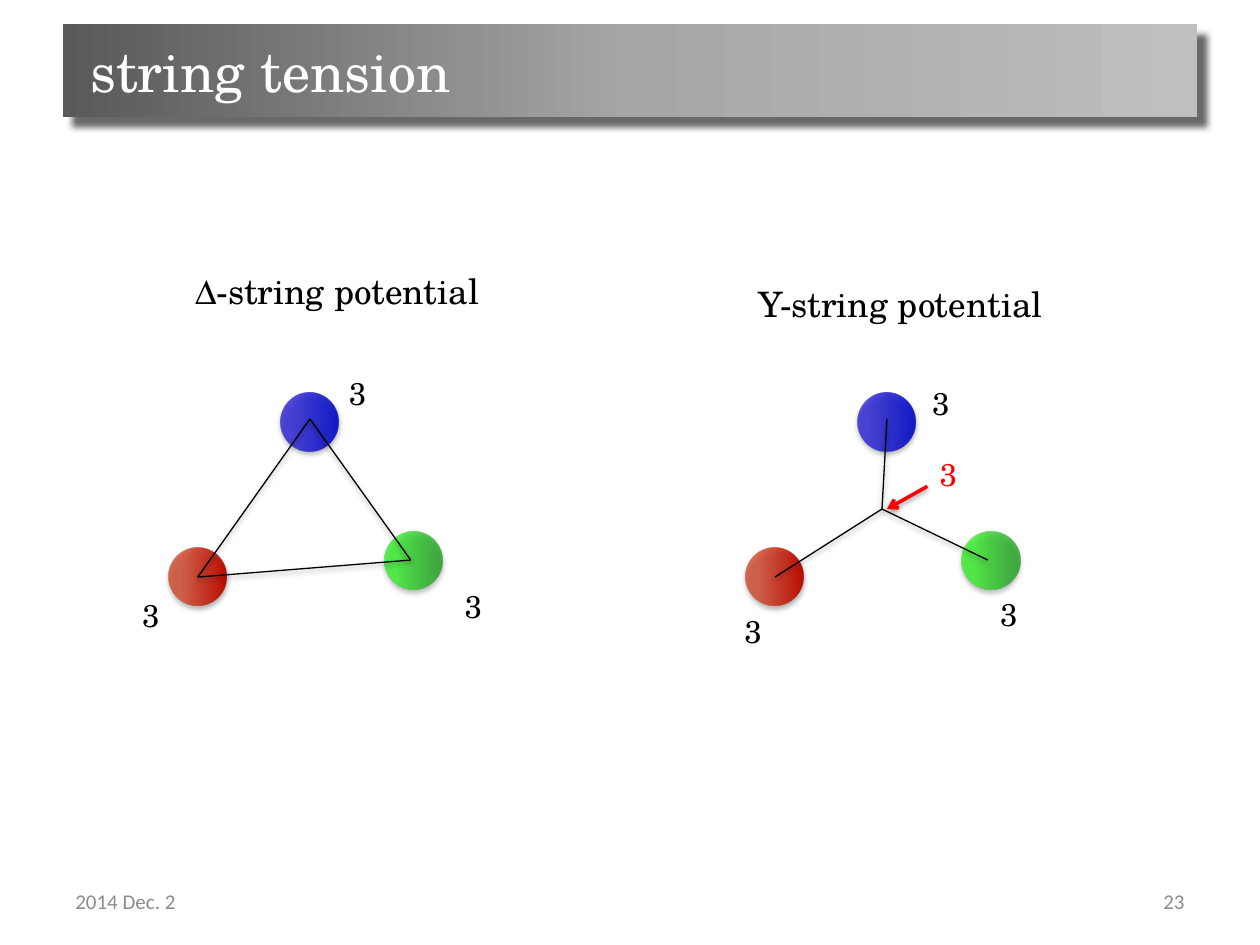
from lxml import etree
from pptx import Presentation
from pptx.dml.color import RGBColor
from pptx.enum.shapes import MSO_CONNECTOR, MSO_SHAPE
from pptx.enum.text import MSO_ANCHOR, MSO_AUTO_SIZE, PP_ALIGN
from pptx.oxml.ns import qn
from pptx.util import Inches, Pt

LINE = MSO_CONNECTOR.STRAIGHT
RECT, OVAL = MSO_SHAPE.RECTANGLE, MSO_SHAPE.OVAL
MIDDLE, TOP = MSO_ANCHOR.MIDDLE, MSO_ANCHOR.TOP
LEFT, RIGHT = PP_ALIGN.LEFT, PP_ALIGN.RIGHT
GROW, FIXED = MSO_AUTO_SIZE.SHAPE_TO_FIT_TEXT, MSO_AUTO_SIZE.NONE

COLS, ROWS = 100, 75
COLOR = {"ink": "000000", "paper": "FFFFFF", "red": "FF0000",
         "muted": "8C8C8C", "dark": "595959"}

# Gradient stops: position, colour, opacity (all but colour in percent)
BAR = [(0, "595959", 100), (50, "A6A6A6", 100), (100, "BFBFBF", 100)]
QUARKS = {
    "green": [(21, "3AF32E", 80), (97, "08970B", 70)],
    "blue": [(21, "2C24D7", 80), (97, "000BC9", 90)],
    "red": [(21, "D44B30", 80), (97, "BB1005", 100)],
}
# Ball corners and string ends, measured from the left of a figure
BALLS = {"green": (17.15, 42.2), "blue": (8.9, 31.2), "red": (0, 43.5)}
ENDS = {"green": (19.2, 44.45), "blue": (11.2, 33.25), "red": (2.3, 45.8)}
HUB = (10.8, 40.4)
SIZE = 4.6


def add(parent, tag, **attrs):
    return etree.SubElement(parent, qn(tag),
                            {key: str(val) for key, val in attrs.items()})


def tint(parent, color, alpha):
    node = add(parent, "a:srgbClr", val=color)
    if alpha < 100:
        add(node, "a:alpha", val=alpha * 1000)


def shade(shape, color, alpha, blur, dist, angle):
    """Give the shape an outer shadow; blur and dist are in points."""
    props = shape._element.spPr
    effects = props.find(qn("a:effectLst"))
    if effects is None:
        effects = add(props, "a:effectLst")
    drop = add(effects, "a:outerShdw", blurRad=Pt(blur), dist=Pt(dist),
               dir=angle * 60000, algn="tl", rotWithShape=0)
    tint(drop, color, alpha)


def write(frame, text, size=18, font="TeX Gyre Schola", color="ink",
          align=LEFT, anchor=TOP, wrap=False, fit=GROW):
    frame.word_wrap, frame.auto_size = wrap, fit
    frame.vertical_anchor = anchor
    para = frame.paragraphs[0]
    para.alignment = align
    run = para.add_run()
    run.text = text
    run.font.size, run.font.name = Pt(size), font
    run.font.color.rgb = RGBColor.from_string(COLOR[color])


class Deck:
    def __init__(self):
        self.file = Presentation()
        self.file.slide_width, self.file.slide_height = Inches(10), Inches(7.5)
        self.slide = self.file.slides.add_slide(self.file.slide_layouts[6])
        self.shapes = self.slide.shapes

    def place(self, *spots):
        """Turn column, row pairs into slide lengths."""
        units = self.file.slide_width / COLS, self.file.slide_height / ROWS
        return [round(val * units[i % 2]) for i, val in enumerate(spots)]

    def text(self, box, words, **style):
        label = self.shapes.add_textbox(*self.place(*box))
        write(label.text_frame, words, **style)

    def block(self, home, kind, box, stops, shadow):
        """Add a preset shape with a left-to-right gradient."""
        shape = home.add_shape(kind, *self.place(*box))
        shape.shadow.inherit = False
        shape.line.fill.background()
        shape.fill.gradient()
        shape.fill.gradient_angle = 0
        chain = shape._element.spPr.find(qn("a:gradFill")).find(qn("a:gsLst"))
        for old in list(chain):
            chain.remove(old)
        for pos, color, alpha in stops:
            tint(add(chain, "a:gs", pos=pos * 1000), color, alpha)
        shade(shape, *shadow)
        return shape

    def line(self, home, start, end, color="ink", width=0.75, arrow=False):
        link = home.add_connector(LINE, *self.place(*start, *end))
        link.line.color.rgb = RGBColor.from_string(COLOR[color])
        link.line.width = Pt(width)
        if arrow:
            add(link.line._get_or_add_ln(), "a:tailEnd", type="arrow")
        shade(link, COLOR["ink"], 38, 3.1, 1.6, 90)

    def figure(self, left, strings):
        """Group three balls with the strings that join them."""
        home = self.shapes.add_group_shape().shapes
        for name, (col, row) in BALLS.items():
            self.block(home, OVAL, (left + col, row, SIZE, SIZE),
                       QUARKS[name], (COLOR["ink"], 35, 3.1, 1.8, 90))
        for ends in strings:
            self.line(home, *[(left + col, row) for col, row in ends])


def main():
    deck = Deck()
    bar = deck.block(deck.shapes, RECT, (5, 1.9, 90, 7.4), BAR,
                     (COLOR["dark"], 90, 4, 8, 45))
    bar.text_frame.margin_left = Inches(0.22)
    write(bar.text_frame, "string tension", size=32, color="paper",
          anchor=MIDDLE, wrap=True, fit=FIXED)

    for col, words, align in ((5, "2014 Dec. 2", LEFT), (71.7, "23", RIGHT)):
        deck.text((col, 69.5, 23.3, 4), words, size=12, font="Calibri",
                  color="muted", align=align, anchor=MIDDLE, wrap=True,
                  fit=FIXED)

    red, blue, green = ENDS["red"], ENDS["blue"], ENDS["green"]
    deck.figure(13.4, [(red, blue), (red, green), (green, blue)])
    deck.figure(59.2, [(red, HUB), (HUB, green), (HUB, blue)])

    deck.text((14.5, 20.9, 24.8, 4.4), "Δ-string potential", size=20)
    deck.text((59.2, 21.9, 24.9, 4.4), "Y-string potential", size=20)
    for col, row in ((10.3, 46.8), (26.7, 29.2), (35.9, 46.1),
                     (58.1, 48.1), (78.4, 46.7), (73, 30)):
        deck.text((col, row, 3.4, 4), "3")
    deck.text((73.6, 35.6, 3.4, 4), "3", color="red")
    deck.line(deck.shapes, (73.6, 38.6), (70.4, 40.4), color="red",
              width=2, arrow=True)
    deck.file.save("out.pptx")


if __name__ == "__main__":
    main()
